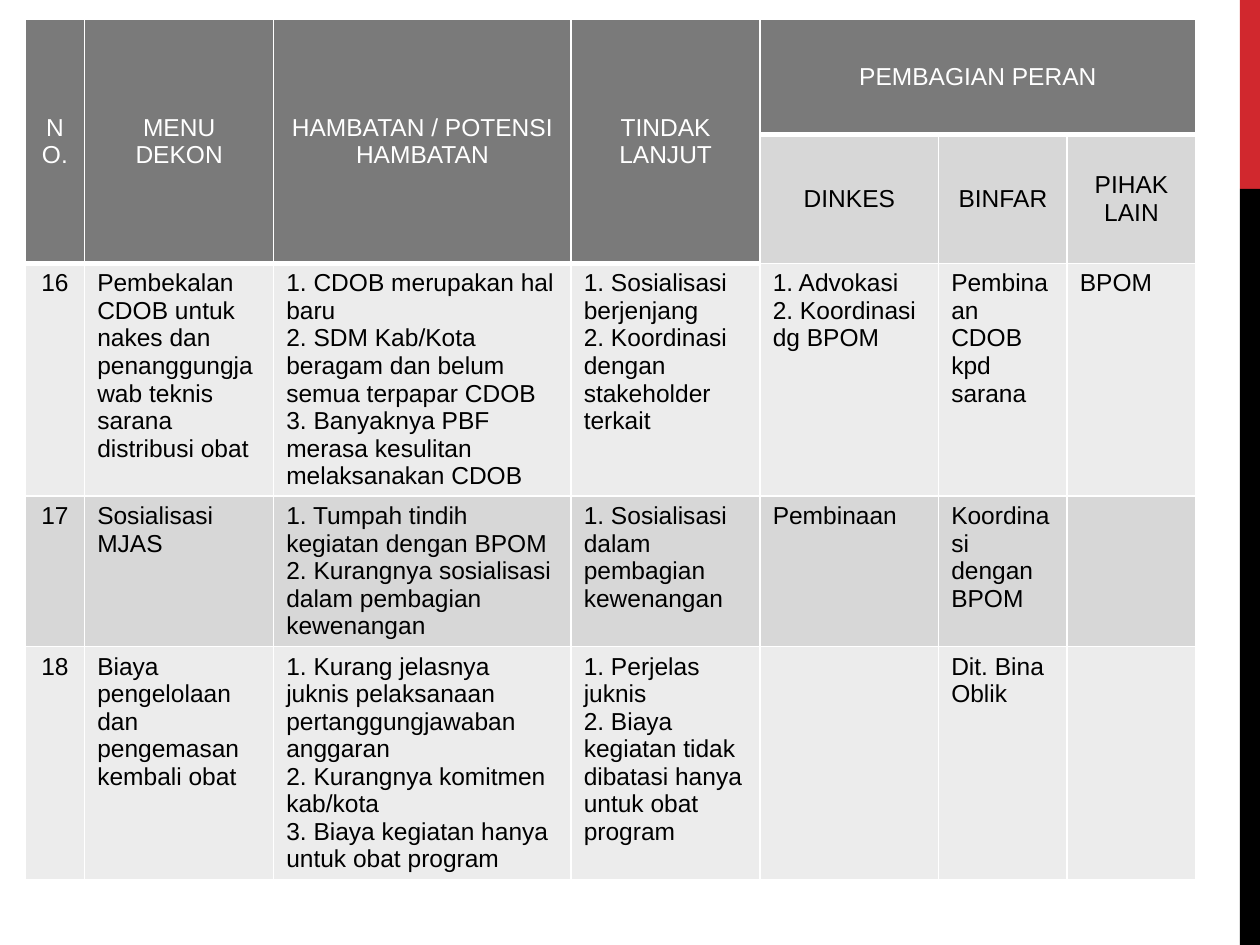
from dataclasses import dataclass

from lxml import etree
from pptx import Presentation
from pptx.dml.color import RGBColor
from pptx.enum.shapes import MSO_SHAPE
from pptx.enum.text import MSO_ANCHOR, PP_ALIGN
from pptx.oxml.ns import qn
from pptx.util import Pt

RECT = MSO_SHAPE.RECTANGLE
MID, TOP = MSO_ANCHOR.MIDDLE, MSO_ANCHOR.TOP
LEFT, MEAN = PP_ALIGN.LEFT, PP_ALIGN.CENTER


@dataclass(frozen=True)
class Theme:
    font: str = "Arial"
    size: float = 14
    white: str = "FFFFFF"
    black: str = "000000"
    red: str = "D1282E"
    head: str = "7A7A7A"
    dark: str = "D7D7D7"
    pale: str = "ECECEC"
    thin: float = 1
    thick: float = 3


@dataclass(frozen=True)
class Bar:
    top: float
    high: float
    fill: str


@dataclass(frozen=True)
class Head:
    text: str
    row: int
    col: int
    down: int = 1
    wide: int = 1


THEME = Theme()
BARS = [Bar(0, 108, THEME.red), Bar(108, 432, THEME.black)]
COLS = [34, 108, 170, 108, 102, 73.5, 73.5]
ROWS = [66, 73.5, 132.5, 86, 132.5]
HEADS = [
    Head("NO.", 0, 0, down=2),
    Head("MENU DEKON", 0, 1, down=2),
    Head("HAMBATAN / POTENSI HAMBATAN", 0, 2, down=2),
    Head("TINDAK LANJUT", 0, 3, down=2),
    Head("PEMBAGIAN PERAN", 0, 4, wide=3),
    Head("DINKES", 1, 4),
    Head("BINFAR", 1, 5),
    Head("PIHAK LAIN", 1, 6),
]
BODY = [
    [
        "16",
        "Pembekalan CDOB untuk nakes dan penanggungjawab teknis sarana distribusi obat",
        "1. CDOB merupakan hal baru\n"
        "2. SDM Kab/Kota beragam dan belum semua terpapar CDOB\n"
        "3. Banyaknya PBF merasa kesulitan melaksanakan CDOB",
        "1. Sosialisasi berjenjang\n2. Koordinasi dengan stakeholder terkait",
        "1. Advokasi\n2. Koordinasi dg BPOM",
        "Pembinaan CDOB kpd sarana",
        "BPOM",
    ],
    [
        "17",
        "Sosialisasi MJAS",
        "1. Tumpah tindih kegiatan dengan BPOM\n"
        "2. Kurangnya sosialisasi dalam pembagian kewenangan",
        "1. Sosialisasi dalam pembagian kewenangan",
        "Pembinaan",
        "Koordinasi dengan BPOM",
        "",
    ],
    [
        "18",
        "Biaya pengelolaan dan pengemasan kembali obat",
        "1. Kurang jelasnya juknis pelaksanaan pertanggungjawaban anggaran\n"
        "2. Kurangnya komitmen kab/kota\n"
        "3. Biaya kegiatan hanya untuk obat program",
        "1. Perjelas juknis\n2. Biaya kegiatan tidak dibatasi hanya untuk obat program",
        "",
        "Dit. Bina Oblik",
        "",
    ],
]


def write(cell, text: str, *, color: str = THEME.black, align=LEFT, anchor=TOP) -> None:
    cell.vertical_anchor = anchor
    frame = cell.text_frame
    frame.text = text
    for para in frame.paragraphs:
        para.alignment = align
        para.font.size = Pt(THEME.size)
        for run in para.runs:
            run.font.name = THEME.font
            run.font.size = Pt(THEME.size)
            run.font.bold = False
            run.font.color.rgb = RGBColor.from_string(color)


def paint(cell, fill: str, base: float = THEME.thin) -> None:
    cell.fill.solid()
    cell.fill.fore_color.rgb = RGBColor.from_string(fill)
    props = cell._tc.get_or_add_tcPr()
    for spot, side in enumerate("LRTB"):
        width = base if side == "B" else THEME.thin
        line = etree.Element(qn(f"a:ln{side}"), w=str(int(Pt(width))))
        solid = etree.SubElement(line, qn("a:solidFill"))
        etree.SubElement(solid, qn("a:srgbClr"), val=THEME.white)
        props.insert(spot, line)


def add_bar(slide, bar: Bar) -> None:
    shape = slide.shapes.add_shape(RECT, Pt(708.5), Pt(bar.top), Pt(11.5), Pt(bar.high))
    shape.shadow.inherit = False
    shape.fill.solid()
    shape.fill.fore_color.rgb = RGBColor.from_string(bar.fill)
    shape.line.fill.background()


def add_head(grid, head: Head) -> None:
    cell = grid.cell(head.row, head.col)
    if head.down * head.wide > 1:
        cell.merge(grid.cell(head.row + head.down - 1, head.col + head.wide - 1))
    main = head.row == 0
    paint(cell, THEME.head if main else THEME.dark, THEME.thick if main else THEME.thin)
    write(cell, head.text, color=THEME.white if main else THEME.black,
          align=MEAN, anchor=MID)


def add_grid(slide) -> None:
    frame = slide.shapes.add_table(len(ROWS), len(COLS), Pt(14.4), Pt(11),
                                   Pt(sum(COLS)), Pt(sum(ROWS)))
    grid = frame.table
    grid.first_row = False
    grid.horz_banding = False
    for col, width in zip(grid.columns, COLS):
        col.width = Pt(width)
    for row, high in zip(grid.rows, ROWS):
        row.height = Pt(high)
    for head in HEADS:
        add_head(grid, head)
    for i, texts in enumerate(BODY):
        for j, text in enumerate(texts):
            cell = grid.cell(i + 2, j)
            paint(cell, THEME.dark if i % 2 else THEME.pale)
            write(cell, text, align=LEFT if j else MEAN)


def main() -> None:
    deck = Presentation()
    deck.slide_width, deck.slide_height = Pt(720), Pt(540)
    slide = deck.slides.add_slide(deck.slide_layouts[6])
    for bar in BARS:
        add_bar(slide, bar)
    add_grid(slide)
    deck.save("out.pptx")


if __name__ == "__main__":
    main()
